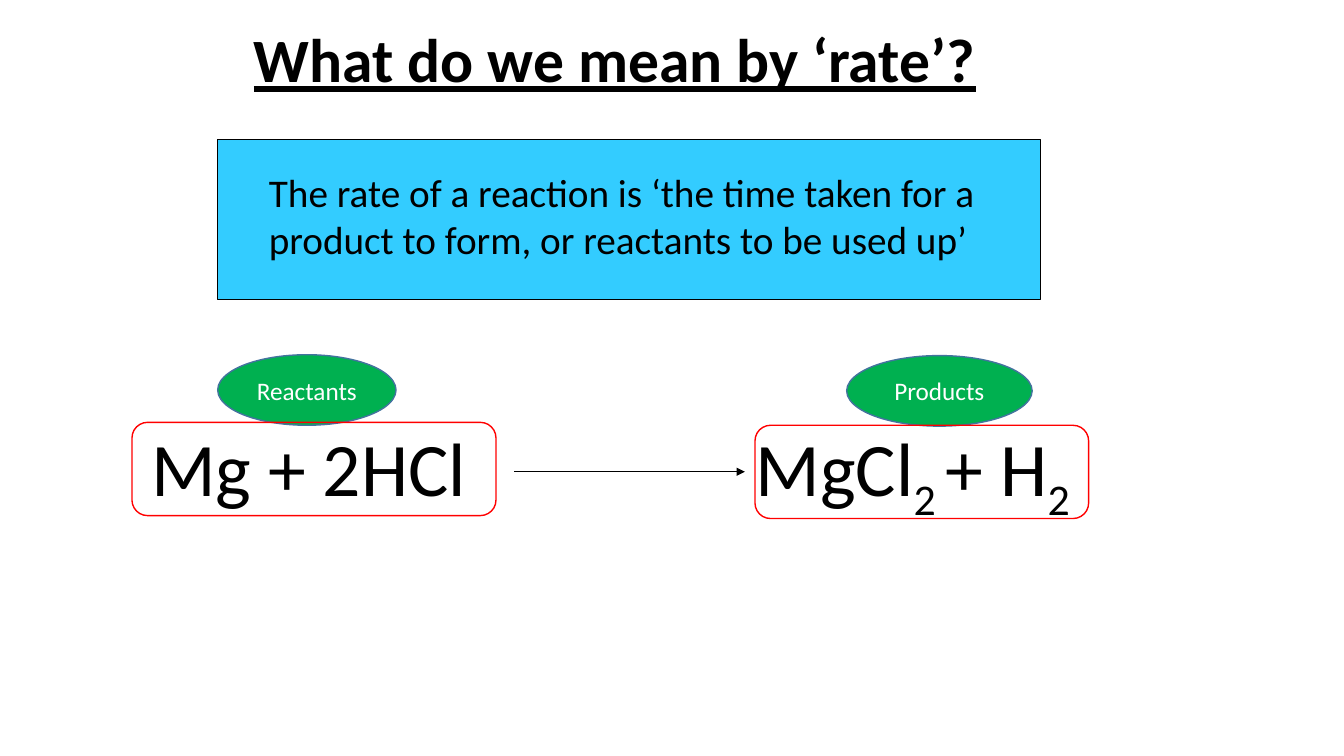
from lxml.etree import SubElement
from pptx import Presentation
from pptx.dml.color import RGBColor
from pptx.enum.shapes import MSO_CONNECTOR, MSO_SHAPE
from pptx.enum.text import MSO_ANCHOR, PP_ALIGN
from pptx.oxml.ns import qn
from pptx.util import Pt

FONT = "Calibri"
COLOURS = {
    "ink": "000000", "paper": "FFFFFF", "panel": "33CCFF",
    "label": "00B050", "label edge": "43739E", "frame": "FF0000",
}

TITLE = "What do we mean by ‘rate’?"
DEFINITION = ("The rate of a reaction is ‘the time taken for a product to form, "
              "or reactants to be used up’")
# Each piece of the equation: wording, whether it is a subscript
EQUATION = [("Mg + 2HCl \tMgCl", False), ("2 ", True), ("+ H", False), ("2", True)]
PRODUCTS_TAB = 432

# Boxes are left, top, width, height in points
TITLE_BOX = (174.3, 0, 612, 90)
PANEL_BOX = (155.4, 99.9, 588.2, 113.9)
DEFINITION_BOX = (185, 116.6, 570.2, 75.1)
EQUATION_BOX = (100.8, 297.4, 728.6, 72.7)
ARROW = (367.2, 337, 532.1, 337)
SIDES = [
    ("Reactants", (155.5, 253.4, 127.4, 50.4), (94.3, 301.7, 260, 66.6)),
    ("Products", (604.8, 254, 132.5, 50.4), (539.3, 303.8, 238.3, 66.6)),
]


def colour(name):
    return RGBColor.from_string(COLOURS[name])


def style(span, size, ink="ink"):
    span.font.name = FONT
    span.font.size = Pt(size)
    span.font.color.rgb = colour(ink)


def add_outlined(page, kind, box, fill, line, width):
    """Add a shadowless preset shape; a fill of None leaves it see-through."""
    shape = page.shapes.add_shape(kind, *map(Pt, box))
    shape.shadow.inherit = False
    if fill:
        shape.fill.solid()
        shape.fill.fore_color.rgb = colour(fill)
    else:
        shape.fill.background()
    shape.line.color.rgb = colour(line)
    shape.line.width = Pt(width)
    return shape


def add_text(page, box, text, size):
    frame = page.shapes.add_textbox(*map(Pt, box)).text_frame
    frame.word_wrap = True
    frame.text = text
    for span in frame.paragraphs[0].runs:
        style(span, size)
    return frame


def add_title(page):
    frame = add_text(page, TITLE_BOX, TITLE, 44)
    frame.vertical_anchor = MSO_ANCHOR.MIDDLE
    para = frame.paragraphs[0]
    para.line_spacing = 0.9
    para.runs[0].font.bold = True
    para.runs[0].font.underline = True


def add_equation(page):
    para = add_text(page, EQUATION_BOX, "", 54).paragraphs[0]
    tabs = SubElement(para._p.get_or_add_pPr(), qn("a:tabLst"))
    SubElement(tabs, qn("a:tab"), pos=str(Pt(PRODUCTS_TAB)), algn="l")
    for text, subscript in EQUATION:
        span = para.add_run()
        span.text = text
        style(span, 54)
        if subscript:
            span._r.get_or_add_rPr().set("baseline", "-25000")


def add_arrow(page):
    arrow = page.shapes.add_connector(MSO_CONNECTOR.STRAIGHT, *map(Pt, ARROW))
    arrow.line.color.rgb = colour("ink")
    arrow.line.width = Pt(0.5)
    SubElement(arrow.line._get_or_add_ln(), qn("a:tailEnd"), type="triangle")
    SubElement(arrow._element.spPr, qn("a:effectLst"))


def add_label(page, text, box):
    oval = add_outlined(page, MSO_SHAPE.OVAL, box, "label", "label edge", 1)
    frame = oval.text_frame
    frame.text = text
    frame.vertical_anchor = MSO_ANCHOR.MIDDLE
    para = frame.paragraphs[0]
    para.alignment = PP_ALIGN.CENTER
    style(para.runs[0], 18, "paper")


def main():
    deck = Presentation()
    deck.slide_width, deck.slide_height = Pt(960), Pt(540)
    page = deck.slides.add_slide(deck.slide_layouts[6])
    add_outlined(page, MSO_SHAPE.RECTANGLE, PANEL_BOX, "panel", "ink", 0.75)
    add_title(page)
    add_text(page, DEFINITION_BOX, DEFINITION, 28)
    add_equation(page)
    add_arrow(page)
    for name, label_box, frame_box in SIDES:
        add_label(page, name, label_box)
        add_outlined(page, MSO_SHAPE.ROUNDED_RECTANGLE, frame_box, None, "frame", 1)
    deck.save("out.pptx")


if __name__ == "__main__":
    main()
